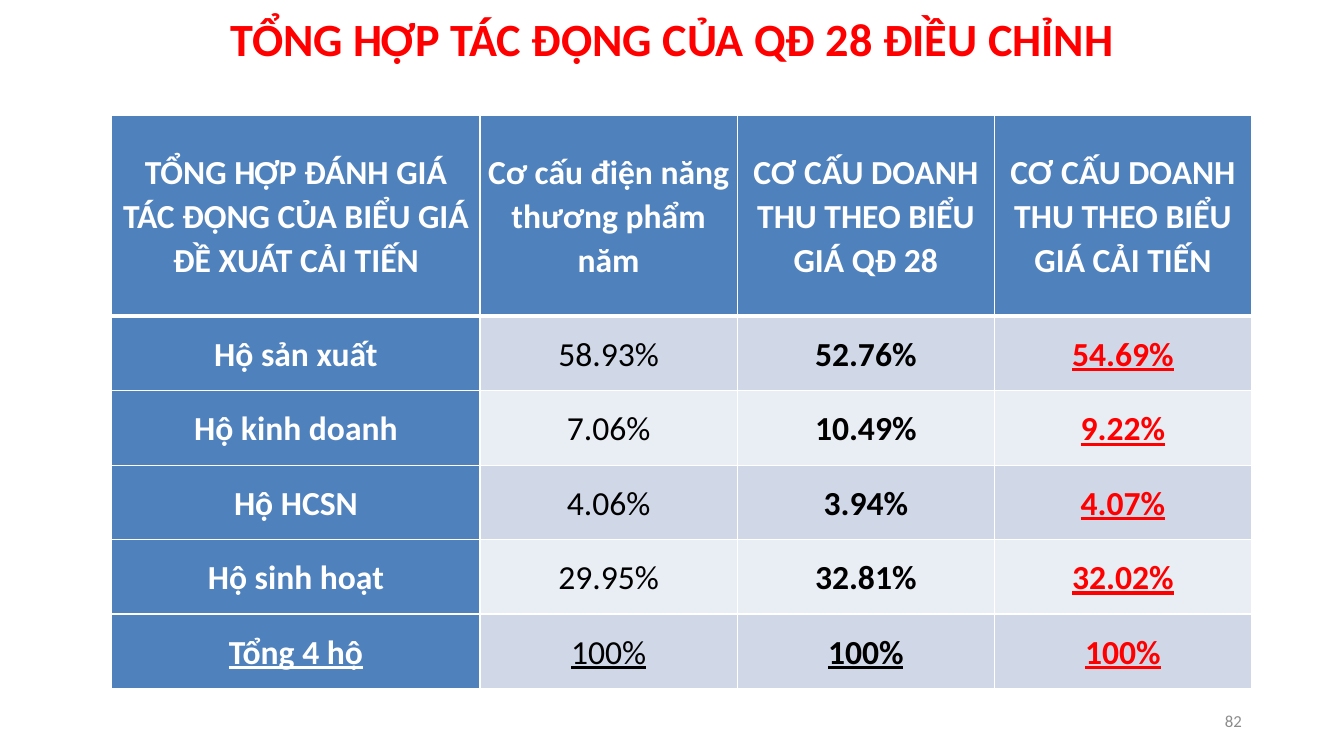
from lxml import etree
from pptx import Presentation
from pptx import util as u
from pptx.dml.color import RGBColor
from pptx.enum import text
from pptx.oxml.ns import qn

WHITE = RGBColor(0xFF, 0xFF, 0xFF)
BLACK = RGBColor(0, 0, 0)
RED = RGBColor(0xFF, 0, 0)
GREY = RGBColor(0x8C, 0x8C, 0x8C)
BLUE = RGBColor(0x4F, 0x81, 0xBD)
BANDS = (RGBColor(0xD0, 0xD8, 0xE8), RGBColor(0xE9, 0xED, 0xF4))
FONT = "Calibri"

HEADINGS = (
    "TỔNG HỢP ĐÁNH GIÁ TÁC ĐỘNG CỦA BIỂU GIÁ ĐỀ XUÁT CẢI TIẾN",
    "Cơ cấu điện năng thương phẩm năm",
    "CƠ CẤU DOANH THU THEO BIỂU GIÁ QĐ 28",
    "CƠ CẤU DOANH THU THEO BIỂU GIÁ CẢI TIẾN",
)
HOUSEHOLDS = (
    ("Hộ sản xuất", "58.93%", "52.76%", "54.69%"),
    ("Hộ kinh doanh", "7.06%", "10.49%", "9.22%"),
    ("Hộ HCSN", "4.06%", "3.94%", "4.07%"),
    ("Hộ sinh hoạt", "29.95%", "32.81%", "32.02%"),
    ("Tổng 4 hộ", "100%", "100%", "100%"),
)
COLUMN_COLORS = (WHITE, BLACK, BLACK, RED)
COLUMN_SHARES = (0.323, 0.2257, 0.2257, 0.2256)
HEADER_SHARE = 0.351


def style_para(para, size, color, align, bold=False, underline=None):
    """Set the font and alignment of one paragraph."""
    font = para.font
    font.name, font.size, font.bold = FONT, u.Pt(size), bold
    font.color.rgb, font.underline = color, underline
    para.alignment = align


def add_label(page, box, words, size, color, align, bold=False):
    """Add one line of text centred vertically in the box."""
    frame = page.shapes.add_textbox(*box).text_frame
    frame.word_wrap = True
    frame.vertical_anchor = text.MSO_ANCHOR.MIDDLE
    para = frame.paragraphs[0]
    para.text = words
    style_para(para, size, color, align, bold)
    return para


def set_borders(cell, bottom=1, top=1):
    """Draw white lines of the given point widths around a cell."""
    properties = cell._tc.get_or_add_tcPr()
    for index, (side, width) in enumerate(zip("LRTB", (1, 1, top, bottom))):
        line = etree.Element(qn(f"a:ln{side}"), w=str(u.Pt(width)))
        fill = etree.SubElement(line, qn("a:solidFill"))
        etree.SubElement(fill, qn("a:srgbClr"), val=str(WHITE))
        properties.insert(index, line)


def fill_cell(cell, words, row, column):
    """Write and style a cell according to its row and column."""
    header, total = row == 0, row == len(HOUSEHOLDS)
    cell.fill.solid()
    cell.fill.fore_color.rgb = BLUE if header or column == 0 else BANDS[(row - 1) % 2]
    cell.vertical_anchor = text.MSO_ANCHOR.MIDDLE
    cell.margin_left = cell.margin_right = u.Cm(0.18)
    cell.margin_top = cell.margin_bottom = 0
    para = cell.text_frame.paragraphs[0]
    para.text = words
    para.line_spacing = 1.07
    para.space_before = para.space_after = u.Pt(6)
    style_para(
        para, 24, WHITE if header else COLUMN_COLORS[column], text.PP_ALIGN.CENTER,
        bold=header or column != 1,
        underline=total or (column == 3 and not header),
    )
    set_borders(cell, bottom=3 if header else 1, top=3 if row == 1 else 1)


def add_impact_table(page, box):
    """Add the table of household shares, divided to fill the box."""
    rows = (HEADINGS,) + HOUSEHOLDS
    left, top, width, height = box
    table = page.shapes.add_table(len(rows), len(HEADINGS), *box).table
    for column, share in zip(table.columns, COLUMN_SHARES):
        column.width = int(width * share)
    header_height = int(height * HEADER_SHARE)
    for index, row in enumerate(table.rows):
        row.height = (height - header_height) // len(HOUSEHOLDS) if index else header_height
    for r, words in enumerate(rows):
        for c, word in enumerate(words):
            fill_cell(table.cell(r, c), word, r, c)


def main():
    """Build the slide and save the deck."""
    deck = Presentation()
    deck.slide_width, deck.slide_height = u.Cm(33.87), u.Cm(19.05)
    page = deck.slides.add_slide(deck.slide_layouts[6])
    title = add_label(
        page, (u.Cm(2.34), u.Cm(0.05), u.Cm(29.21), u.Cm(2)),
        "TỔNG HỢP TÁC ĐỘNG CỦA QĐ 28 ĐIỀU CHỈNH", 33, RED, text.PP_ALIGN.CENTER, bold=True,
    )
    title.line_spacing = 0.9
    add_impact_table(page, (u.Cm(2.82), u.Cm(2.9), u.Cm(28.72), u.Cm(14.45)))
    add_label(
        page, (u.Cm(23.93), u.Cm(17.65), u.Cm(7.62), u.Cm(1.02)),
        "82", 12, GREY, text.PP_ALIGN.RIGHT,
    )
    deck.save("out.pptx")


if __name__ == "__main__":
    main()
